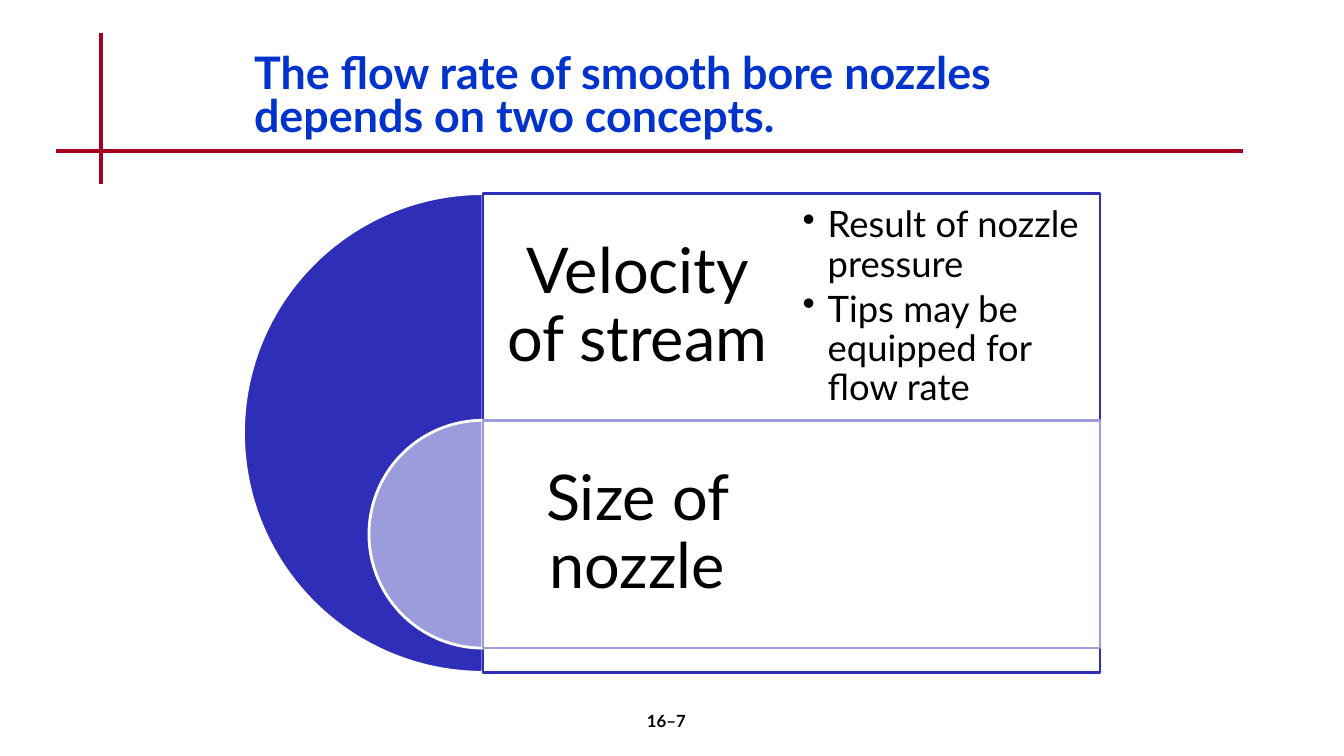
from dataclasses import dataclass

from lxml import etree
from pptx import Presentation
from pptx.dml.color import RGBColor
from pptx.enum.shapes import MSO_CONNECTOR, MSO_SHAPE
from pptx.enum.text import MSO_ANCHOR, MSO_AUTO_SIZE, PP_ALIGN
from pptx.oxml.ns import qn
from pptx.util import Inches, Pt

PIE, RECTANGLE = MSO_SHAPE.PIE, MSO_SHAPE.RECTANGLE
STRAIGHT = MSO_CONNECTOR.STRAIGHT
TOP, MIDDLE = MSO_ANCHOR.TOP, MSO_ANCHOR.MIDDLE
LEFT, CENTER = PP_ALIGN.LEFT, PP_ALIGN.CENTER
NO_AUTOFIT = MSO_AUTO_SIZE.NONE

FONT = "Lato"
COLORS = {
    "rule": "A50021",
    "title": "0033CC",
    "text": "000000",
    "white": "FFFFFF",
    "velocity": "2E2EB9",
    "size": "9C9CDD",
}

PANEL_LEFT = 4.79
PANEL_WIDTH = 6.12
COLUMN_WIDTH = PANEL_WIDTH / 2
ROW_HEIGHT = 2.26


@dataclass
class Rule:
    start: tuple[float, float]
    end: tuple[float, float]


@dataclass
class Concept:
    label: str
    color: str
    top: float
    diameter: float
    bullets: tuple[str, ...] = ()


RULES = [
    Rule((1, 0.33), (1, 1.83)),
    Rule((0.56, 1.5), (12.33, 1.5)),
]

CONCEPTS = [
    Concept("Velocity of stream", "velocity", 1.92, 4.75,
            ("Result of nozzle pressure", "Tips may be equipped for flow rate")),
    Concept("Size of nozzle", "size", 4.17, ROW_HEIGHT),
]


def rgb(name: str) -> RGBColor:
    return RGBColor.from_string(COLORS[name])


def draw_rule(shapes, rule: Rule) -> None:
    line = shapes.add_connector(STRAIGHT, *map(Inches, rule.start + rule.end))
    line.line.color.rgb = rgb("rule")
    line.line.width = Pt(3)
    etree.SubElement(line._element.spPr, qn("a:effectLst"))


def draw_shape(shapes, kind, left: float, top: float, width: float, height: float,
               fill: str, outline: str):
    shape = shapes.add_shape(kind, *map(Inches, (left, top, width, height)))
    shape.shadow.inherit = False
    shape.fill.solid()
    shape.fill.fore_color.rgb = rgb(fill)
    shape.line.color.rgb = rgb(outline)
    shape.line.width = Pt(2)
    return shape


def set_opacity(shape, percent: int) -> None:
    color = shape._element.spPr.find(qn("a:solidFill"))[0]
    etree.SubElement(color, qn("a:alpha"), val=str(percent * 1000))


def fill_text(box, lines: tuple[str, ...], size: float, color: str = "text",
              bold: bool = False, align=CENTER, anchor=MIDDLE,
              spacing: float = 0.9, inset: float | None = None) -> None:
    frame = box.text_frame
    frame.text = "\n".join(lines)
    frame.word_wrap = True
    frame.auto_size = NO_AUTOFIT
    frame.vertical_anchor = anchor
    if inset is not None:
        frame.margin_left = frame.margin_right = Inches(inset)
        frame.margin_top = frame.margin_bottom = Inches(inset)
    for para in frame.paragraphs:
        para.alignment = align
        para.line_spacing = spacing
        for span in para.runs:
            span.font.name = FONT
            span.font.size = Pt(size)
            span.font.bold = bold
            span.font.color.rgb = rgb(color)


def add_bullets(box) -> None:
    for index, para in enumerate(box.text_frame.paragraphs):
        if index:
            para.space_before = Pt(4)
        properties = para._p.get_or_add_pPr()
        properties.set("marL", str(Inches(0.25)))
        properties.set("indent", str(-Inches(0.25)))
        etree.SubElement(properties, qn("a:buChar"), char="•")


def draw_concept(shapes, concept: Concept) -> None:
    top, diameter = concept.top, concept.diameter
    half_disc = draw_shape(shapes, PIE, PANEL_LEFT - diameter / 2, top,
                           diameter, diameter, concept.color, "white")
    half_disc.adjustments[0] = 54
    half_disc.adjustments[1] = 162
    panel = draw_shape(shapes, RECTANGLE, PANEL_LEFT, top,
                       PANEL_WIDTH, diameter, "white", concept.color)
    set_opacity(panel, 90)
    column = Inches(COLUMN_WIDTH), Inches(ROW_HEIGHT)
    label = shapes.add_textbox(Inches(PANEL_LEFT), Inches(top), *column)
    fill_text(label, (concept.label,), 45, inset=0.19)
    if concept.bullets:
        details = shapes.add_textbox(Inches(PANEL_LEFT + COLUMN_WIDTH), Inches(top), *column)
        fill_text(details, concept.bullets, 26, align=LEFT, inset=0.11)
        add_bullets(details)


def main() -> None:
    deck = Presentation()
    deck.slide_width = Inches(13.33)
    deck.slide_height = Inches(7.5)
    page = deck.slides.add_slide(deck.slide_layouts[5])

    for rule in RULES:
        draw_rule(page.shapes, rule)

    title = page.shapes.title
    title.left, title.top = Inches(2.42), Inches(0.5)
    title.width, title.height = Inches(8.32), Inches(1)
    fill_text(title, ("The flow rate of smooth bore nozzles depends on two concepts.",),
              32, color="title", bold=True, align=LEFT, anchor=TOP, spacing=0.8)

    number = page.shapes.add_textbox(Inches(5.22), Inches(7), Inches(2.78), Inches(0.5))
    fill_text(number, ("16–7",), 12, bold=True, anchor=TOP, spacing=1.0)

    diagram = page.shapes.add_group_shape()
    for concept in CONCEPTS:
        draw_concept(diagram.shapes, concept)

    deck.save("out.pptx")


if __name__ == "__main__":
    main()
